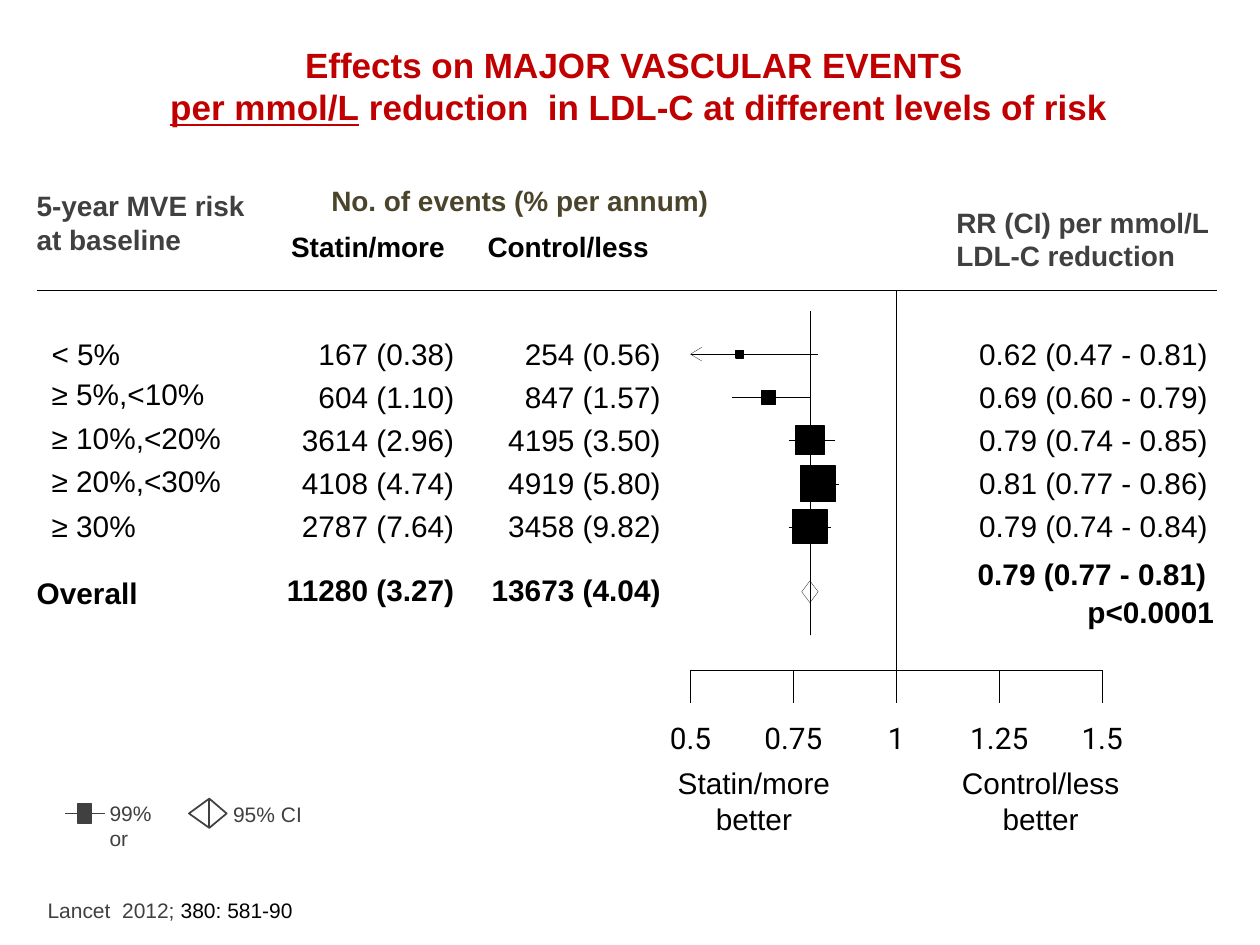
import dataclasses
import pptx
import pptx.dml.color
import pptx.enum.dml
import pptx.enum.shapes
import pptx.enum.text
import pptx.oxml
import pptx.util

Cm = pptx.util.Cm
Pt = pptx.util.Pt
Align = pptx.enum.text.PP_ALIGN
Shape = pptx.enum.shapes.MSO_SHAPE


@dataclasses.dataclass(frozen=True)
class Theme:
    black: str = "000000"
    grey: str = "404040"
    red: str = "C00000"
    olive: str = "4A452A"
    face: str = "Arial"
    scale_face: str = "Roboto"
    title: int = 20
    body: int = 17
    head: int = 16
    small: int = 12
    hair: float = 0.13
    stroke: float = 1


def paint(ink):
    return pptx.dml.color.RGBColor.from_string(ink)


class Page:
    def __init__(self, deck, theme):
        self.theme = theme
        self.shapes = deck.slides.add_slide(deck.slide_layouts[6]).shapes

    def text(self, x, y, wide, high, lines, size, ink=None, bold=False,
             align=Align.LEFT, face=None, pad=False):
        frame = self.shapes.add_textbox(Cm(x), Cm(y), Cm(wide), Cm(high)).text_frame
        frame.word_wrap = True
        if not pad:
            frame.margin_left = frame.margin_right = 0
            frame.margin_top = frame.margin_bottom = 0
        for num, line in enumerate(lines):
            para = frame.add_paragraph() if num else frame.paragraphs[0]
            para.alignment = align
            font = para.font
            font.name = face or self.theme.face
            font.size = Pt(size)
            font.bold = bold
            font.color.rgb = paint(ink or self.theme.black)
            para.add_run().text = line
        return frame.paragraphs[0]

    def line(self, x1, y1, x2, y2, ink=None, width=None, dash=False):
        link = self.shapes.add_connector(
            pptx.enum.shapes.MSO_CONNECTOR.STRAIGHT, Cm(x1), Cm(y1), Cm(x2), Cm(y2))
        link.line.color.rgb = paint(ink or self.theme.black)
        link.line.width = Pt(width or self.theme.hair)
        if dash:
            link.line.dash_style = pptx.enum.dml.MSO_LINE.ROUND_DOT
        props = link._element.spPr
        props.append(pptx.oxml.parse_xml(
            '<a:effectLst xmlns:a="http://schemas.openxmlformats.org/drawingml/2006/main"/>'))

    def block(self, x, y, wide, high, ink=None):
        rect = self.shapes.add_shape(
            Shape.RECTANGLE, Cm(x - wide / 2), Cm(y - high / 2), Cm(wide), Cm(high))
        rect.shadow.inherit = False
        rect.fill.solid()
        rect.fill.fore_color.rgb = paint(ink or self.theme.black)
        rect.line.color.rgb = paint(ink or self.theme.black)
        rect.line.width = Pt(0)

    def trace(self, points, close, ink, width):
        spots = [(Cm(x), Cm(y)) for x, y in points]
        pen = self.shapes.build_freeform(*spots[0], scale=1.0)
        pen.add_line_segments(spots[1:], close=close)
        form = pen.convert_to_shape()
        form.shadow.inherit = False
        form.fill.background()
        form.line.color.rgb = paint(ink)
        form.line.width = Pt(width)


ROWS = [
    ("< 5%", 6.76, "167 (0.38)", "254 (0.56)", 0.62, 0.47, 0.81, 0.16),
    ("≥ 5%,<10%", 7.57, "604 (1.10)", "847 (1.57)", 0.69, 0.60, 0.79, 0.28),
    ("≥ 10%,<20%", 8.46, "3614 (2.96)", "4195 (3.50)", 0.79, 0.74, 0.85, 0.58),
    ("≥ 20%,<30%", 9.32, "4108 (4.74)", "4919 (5.80)", 0.81, 0.77, 0.86, 0.71),
    ("≥ 30%", 10.24, "2787 (7.64)", "3458 (9.82)", 0.79, 0.74, 0.84, 0.69),
]
LOW, LEFT, UNIT = 0.5, 13.92, 8.3
TOP, STEP = 7.14, 0.87
RULE, AXIS = 5.84, 13.51
EVENTS = (5.6, 9.76)


def place(risk):
    return LEFT + UNIT * (risk - LOW)


def heads(page):
    theme = page.theme
    para = page.text(1.45, 0.76, 22.86, 3.18, ["Effects on MAJOR VASCULAR EVENTS "],
                     theme.title, theme.red, True, Align.CENTER, pad=True)
    para.add_line_break()
    run = para.add_run()
    run.text = "per mmol/L"
    run.font.underline = True
    para.add_run().text = " reduction  in LDL-C at different levels of risk"
    page.text(6.68, 3.71, 7.8, 0.69, ["No. of events (% per annum)"],
              theme.head, theme.olive, True)
    page.text(5.87, 4.62, 3.3, 0.69, ["Statin/more"], theme.head, bold=True)
    page.text(9.83, 4.62, 3.4, 0.69, ["Control/less"], theme.head, bold=True)
    page.text(0.74, 3.81, 4.4, 1.37, ["5-year MVE risk", "at baseline"],
              theme.head, theme.grey, True)
    page.text(19.28, 4.14, 5.4, 1.37, ["RR (CI) per mmol/L", "LDL-C reduction"],
              theme.head, theme.grey, True)
    page.line(0.74, RULE, 24.54, RULE)


def counts(page, y, pair, bold=False):
    for x, count in zip(EVENTS, pair):
        page.text(x, y, 3.56, 0.74, [count], page.theme.body,
                  bold=bold, align=Align.RIGHT)


def plot(page):
    theme = page.theme
    for num, (name, top, more, less, risk, low, high, side) in enumerate(ROWS):
        y = TOP + STEP * num
        page.text(1.04, top, 3.6, 0.74, [name], theme.body)
        counts(page, y - 0.38, (more, less))
        page.text(19.74, y - 0.38, 4.8, 0.74,
                  [f"{risk:.2f} ({low:.2f} - {high:.2f})"], theme.body)
        page.block(place(risk), y, side, side)
        page.line(place(max(low, LOW)), y, place(high), y)
        if low < LOW:
            page.trace([(LEFT + 0.23, y - 0.14), (LEFT, y), (LEFT + 0.23, y + 0.14)],
                       False, theme.black, theme.hair)
    mid = 11.93
    page.text(0.74, 11.58, 2.2, 0.74, ["Overall"], theme.body, bold=True)
    counts(page, 11.53, ("11280 (3.27)", "13673 (4.04)"), True)
    page.text(19.71, 11.2, 4.9, 0.74, ["0.79 (0.77 - 0.81)"], theme.body, bold=True)
    page.text(21.92, 11.96, 2.8, 0.74, ["p<0.0001"], theme.body, bold=True)
    for tip in (mid - 0.22, mid + 0.22):
        for end in (0.77, 0.81):
            page.line(place(end), mid, place(0.79), tip)
    page.line(place(0.79), 6.27, place(0.79), 12.8, dash=True)


def scale(page):
    theme = page.theme
    page.line(place(1), 13.84, place(1), RULE)
    page.line(place(0.5), AXIS, place(1.5), AXIS)
    for tick in (0.5, 0.75, 1, 1.25, 1.5):
        x = place(tick)
        page.line(x, AXIS, x, AXIS + 0.66)
        page.text(x - 0.8, 14.5, 1.6, 0.81, [f"{tick}"], theme.body,
                  align=Align.CENTER, face=theme.scale_face)
    for x, side in ((13.5, "Statin/more"), (19.28, "Control/less")):
        page.text(x, 15.42, 3.4, 1.45, [side, "better"], theme.body,
                  align=Align.CENTER)


def notes(page):
    theme = page.theme
    y = 16.4
    page.block(1.71, y, 0.28, 0.38, theme.grey)
    page.line(1.32, y, 2.11, y, theme.grey, theme.stroke)
    page.text(2.21, 16.13, 1.27, 0.48, ["99% or"], theme.small, theme.grey)
    page.trace([(4.22, 16.1), (3.81, y), (4.22, 16.69), (4.57, y)],
               True, theme.grey, theme.stroke)
    page.line(4.22, 16.69, 4.22, 16.1, theme.grey, theme.stroke)
    page.text(4.7, 16.15, 1.6, 0.51, ["95% CI"], theme.small, theme.grey)
    para = page.text(0.71, 17.96, 5.8, 0.76, ["Lancet  2012; "],
                     theme.small, theme.grey, pad=True)
    run = para.add_run()
    run.text = "380: 581-90"
    run.font.color.rgb = paint(theme.black)


def main():
    deck = pptx.Presentation()
    deck.slide_width = Cm(25.4)
    deck.slide_height = Cm(19.05)
    page = Page(deck, Theme())
    heads(page)
    scale(page)
    plot(page)
    notes(page)
    deck.save("out.pptx")


if __name__ == "__main__":
    main()
